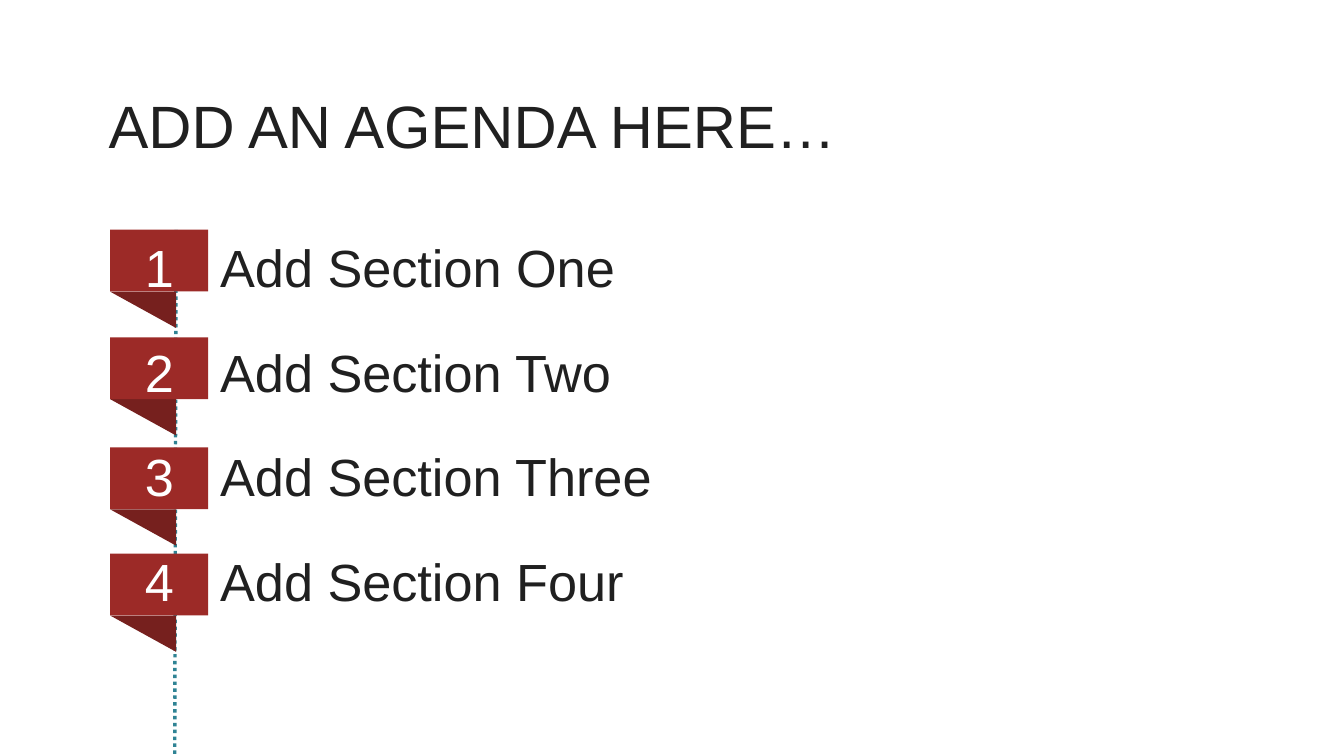
from dataclasses import dataclass

from lxml.etree import SubElement
from pptx import Presentation
from pptx.dml.color import RGBColor
from pptx.enum.dml import MSO_LINE
from pptx.enum.shapes import MSO_CONNECTOR, MSO_SHAPE
from pptx.oxml.ns import qn
from pptx.slide import Slide
from pptx.util import Inches, Pt

INK = RGBColor(0x20, 0x20, 0x20)
RED = RGBColor(0x9C, 0x2A, 0x27)
DARK_RED = RGBColor(0x76, 0x20, 0x1E)
TEAL = RGBColor(0x2F, 0x83, 0x94)
WHITE = RGBColor(0xFF, 0xFF, 0xFF)
PLATE_HEIGHT = 0.46


@dataclass(frozen=True)
class Section:
    """An agenda entry and the top of its ribbon in inches."""

    label: str
    ribbon_top: float


@dataclass(frozen=True)
class Box:
    """A rectangular area in inches."""

    left: float
    top: float
    width: float
    height: float

    def lengths(self) -> list[Inches]:
        """Return the area as lengths for python-pptx."""
        return [Inches(v) for v in (self.left, self.top, self.width, self.height)]


SECTIONS = (
    Section("Add Section One", 1.71),
    Section("Add Section Two", 2.51),
    Section("Add Section Three", 3.33),
    Section("Add Section Four", 4.12),
)


def add_text(slide: Slide, box: Box, lines: list[str], *, size: int,
             spacing: float = 1.0, numbered: bool = False) -> None:
    """Add one paragraph per line, numbered in white on request."""
    frame = slide.shapes.add_textbox(*box.lengths()).text_frame
    frame.word_wrap = True
    for index, line in enumerate(lines):
        paragraph = frame.add_paragraph() if index else frame.paragraphs[0]
        paragraph.line_spacing = spacing
        run = paragraph.add_run()
        run.text = line
        run.font.name = "Arial"
        run.font.size = Pt(size)
        run.font.color.rgb = INK
        properties = paragraph._p.get_or_add_pPr()
        before = SubElement(properties, qn("a:spcBef"))
        SubElement(before, qn("a:spcPct"), val="20000")
        if numbered:
            properties.set("marL", str(Inches(0.56)))
            properties.set("indent", str(Inches(-0.56)))
            colour = SubElement(properties, qn("a:buClr"))
            SubElement(colour, qn("a:srgbClr"), val=str(WHITE))
            SubElement(properties, qn("a:buFont"), typeface="Arial")
            SubElement(properties, qn("a:buAutoNum"), type="arabicPlain")


def add_block(slide: Slide, kind: MSO_SHAPE, box: Box, fill: RGBColor,
              rotation: float = 0) -> None:
    """Add a flat, borderless shape."""
    block = slide.shapes.add_shape(kind, *box.lengths())
    block.shadow.inherit = False
    block.fill.solid()
    block.fill.fore_color.rgb = fill
    block.line.fill.background()
    block.rotation = rotation


def add_ribbon(slide: Slide, top: float) -> None:
    """Add a number plate with its folded tail."""
    add_block(slide, MSO_SHAPE.RIGHT_TRIANGLE,
              Box(0.82, top + PLATE_HEIGHT, 0.49, 0.27), DARK_RED, rotation=180)
    add_block(slide, MSO_SHAPE.RECTANGLE, Box(0.82, top, 0.73, PLATE_HEIGHT), RED)


def add_timeline(slide: Slide) -> None:
    """Add the dotted line that runs behind the ribbons."""
    timeline = slide.shapes.add_connector(
        MSO_CONNECTOR.STRAIGHT, Inches(1.3), Inches(5.66), Inches(1.31), Inches(1.71))
    timeline.line.color.rgb = TEAL
    timeline.line.width = Pt(1.85)
    timeline.line.dash_style = MSO_LINE.ROUND_DOT
    SubElement(timeline._element.spPr, qn("a:effectLst"))


def main() -> None:
    """Build the agenda slide."""
    presentation = Presentation()
    presentation.slide_width = Inches(10)
    presentation.slide_height = Inches(10 * 9 / 16)
    slide = presentation.slides.add_slide(presentation.slide_layouts[6])
    add_timeline(slide)
    for section in SECTIONS:
        add_ribbon(slide, section.ribbon_top)
    add_text(slide, Box(0.71, 0.61, 6.32, 0.62), ["ADD AN AGENDA HERE…"], size=32)
    add_text(slide, Box(0.98, 1.47, 7.59, 3.86),
             [section.label for section in SECTIONS],
             size=28, spacing=1.5, numbered=True)
    presentation.save("out.pptx")


if __name__ == "__main__":
    main()
